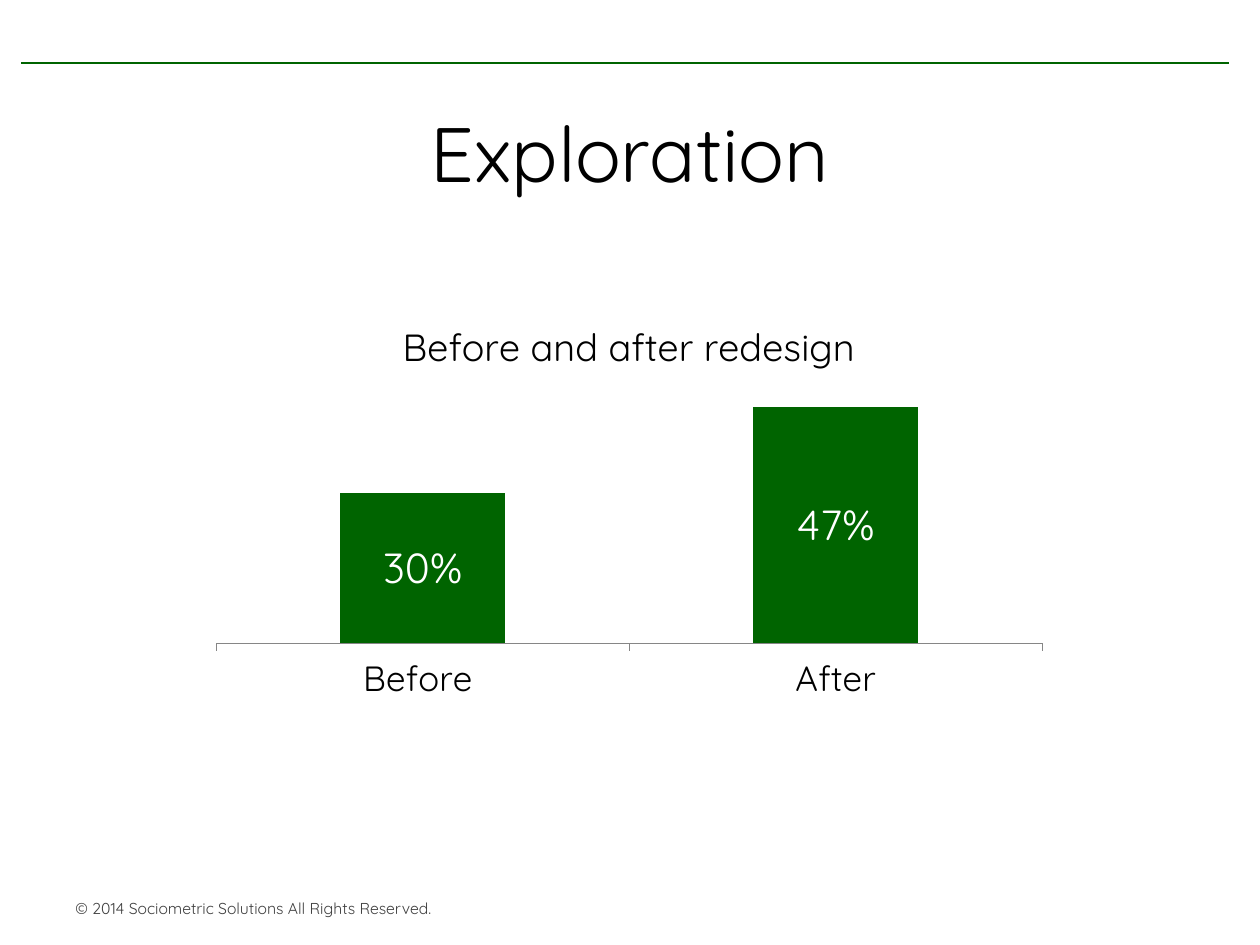
from lxml import etree
from pptx import Presentation
from pptx.chart.data import CategoryChartData
from pptx.dml.color import RGBColor
from pptx.enum.chart import XL_CHART_TYPE, XL_LABEL_POSITION, XL_TICK_MARK
from pptx.enum.shapes import MSO_CONNECTOR
from pptx.enum.text import MSO_ANCHOR, PP_ALIGN
from pptx.oxml import parse_xml
from pptx.oxml.ns import nsdecls, qn
from pptx.util import Inches, Pt

COLUMN = XL_CHART_TYPE.COLUMN_CLUSTERED
LABEL_CENTER = XL_LABEL_POSITION.CENTER
TICK_OUT, TICK_NONE = XL_TICK_MARK.OUTSIDE, XL_TICK_MARK.NONE
STRAIGHT = MSO_CONNECTOR.STRAIGHT
MIDDLE, CENTER = MSO_ANCHOR.MIDDLE, PP_ALIGN.CENTER

GREEN = RGBColor(0x00, 0x64, 0x00)
BLACK = RGBColor(0x00, 0x00, 0x00)
WHITE = RGBColor(0xFF, 0xFF, 0xFF)
DARK_GRAY = RGBColor(0x40, 0x40, 0x40)
AXIS_GRAY = RGBColor(0x86, 0x86, 0x86)
FONT = "Quicksand"


def set_font(font, size, color):
    font.name = FONT
    font.size = Pt(size)
    font.bold = False
    font.color.rgb = color


def add_rule(s):
    line = s.shapes.add_connector(
        STRAIGHT, Inches(0.17), Inches(0.5), Inches(9.75), Inches(0.5))
    line.line.color.rgb = GREEN
    line.line.width = Pt(1)
    etree.SubElement(line._element.spPr, qn("a:effectLst"))


def add_footer(s, text):
    sp = s.shapes.add_textbox(Inches(0.5), Inches(7.08), Inches(5), Inches(0.25))
    tf = sp.text_frame
    tf.word_wrap = True
    tf.text = text
    set_font(tf.paragraphs[0].runs[0].font, 9, DARK_GRAY)


def set_title(s, text):
    sp = s.shapes.title
    sp.left, sp.top = Inches(0.5), Inches(0.58)
    sp.width, sp.height = Inches(9), Inches(1.25)
    tf = sp.text_frame
    tf.text = text
    tf.vertical_anchor = MIDDLE
    p = tf.paragraphs[0]
    p.alignment = CENTER
    set_font(p.runs[0].font, 44, BLACK)


def set_plot_layout(chart, **fractions):
    """Fix the inner plot area, given as fractions of the chart frame."""
    plot_area = chart._chartSpace.chart.plotArea
    for old in plot_area.findall(qn("c:layout")):
        plot_area.remove(old)
    values = "".join(f'<c:{k} val="{v}"/>' for k, v in fractions.items())
    plot_area.insert(0, parse_xml(
        f'<c:layout {nsdecls("c")}><c:manualLayout><c:layoutTarget val="inner"/>'
        f'<c:xMode val="edge"/><c:yMode val="edge"/>{values}'
        '</c:manualLayout></c:layout>'))


def add_column_chart(s, title, categories, values):
    data = CategoryChartData(number_format="0%")
    data.categories = categories
    data.add_series("Series 1", values)
    chart = s.shapes.add_chart(
        COLUMN, Inches(1.58), Inches(2.36), Inches(6.83), Inches(3.27), data).chart
    set_font(chart.font, 18, BLACK)
    chart.has_legend = False
    chart.has_title = True
    tf = chart.chart_title.text_frame
    tf.text = title
    set_font(tf.paragraphs[0].runs[0].font, 21.6, BLACK)

    cat_axis = chart.category_axis
    cat_axis.major_tick_mark = TICK_OUT
    cat_axis.minor_tick_mark = TICK_NONE
    cat_axis.format.line.color.rgb = AXIS_GRAY
    set_font(cat_axis.tick_labels.font, 20, BLACK)
    val_axis = chart.value_axis
    val_axis.minimum_scale, val_axis.maximum_scale = 0, 0.5
    val_axis.has_major_gridlines = False
    val_axis.visible = False

    plot = chart.plots[0]
    plot.gap_width = 150
    plot.vary_by_categories = False
    fill = plot.series[0].format.fill
    fill.solid()
    fill.fore_color.rgb = GREEN
    labels = plot.series[0].data_labels
    labels.show_value = True
    labels.position = LABEL_CENTER
    labels.number_format = "0%"
    labels.number_format_is_linked = False
    set_font(labels.font, 24, WHITE)
    set_plot_layout(chart, x=0.02, y=0.23, w=0.96, h=0.61)


def main():
    prs = Presentation()
    prs.slide_width, prs.slide_height = Inches(10), Inches(7.5)
    s = prs.slides.add_slide(prs.slide_layouts[5])
    add_rule(s)
    add_footer(s, "© 2014 Sociometric Solutions All Rights Reserved.")
    set_title(s, "Exploration")
    add_column_chart(s, "Before and after redesign", ["Before ", "After"], [0.3, 0.47])
    prs.save("out.pptx")


if __name__ == "__main__":
    main()
